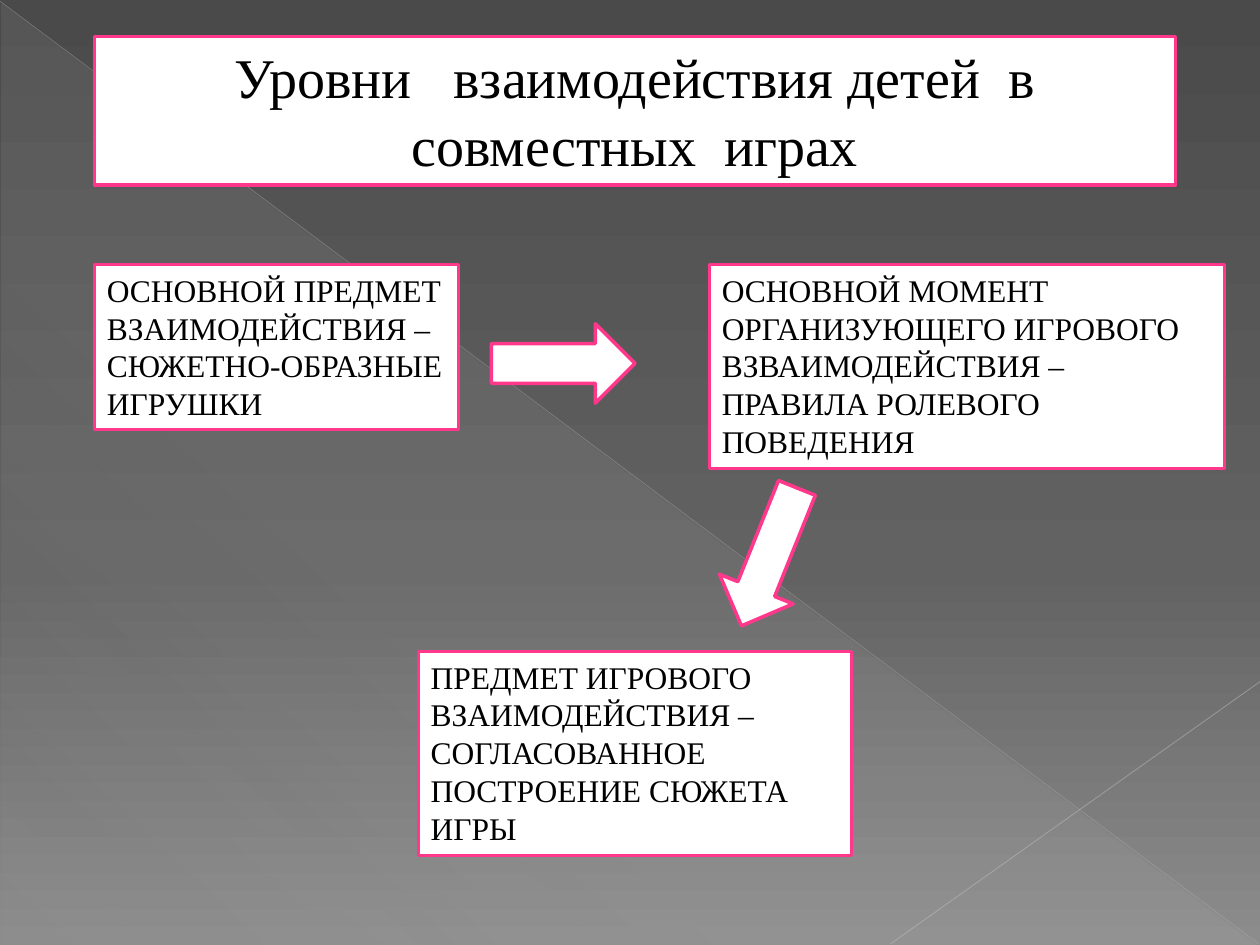
import dataclasses
import typing

import lxml.etree
import pptx
import pptx.dml.color
import pptx.enum.dml
import pptx.enum.shapes
import pptx.enum.text
import pptx.oxml.ns
import pptx.util

RGBColor = pptx.dml.color.RGBColor
Shapes = pptx.enum.shapes.MSO_SHAPE
qn = pptx.oxml.ns.qn

WHITE = RGBColor(0xFF, 0xFF, 0xFF)
BLACK = RGBColor(0x00, 0x00, 0x00)
PINK = RGBColor(0xFF, 0x38, 0x8C)
DARK_GREY = RGBColor(0x4A, 0x4A, 0x4A)
MID_GREY = RGBColor(0x62, 0x62, 0x62)
LIGHT_GREY = RGBColor(0x8C, 0x8C, 0x8C)
VEIL_GREY = RGBColor(0xD2, 0xD2, 0xD2)
DIAGONAL_GREY = RGBColor(0xBF, 0xBF, 0xBF)
CORNER_GREY = RGBColor(0xC6, 0xC6, 0xC6)

FONT = "Times New Roman"
CELL = pptx.util.Inches(0.1)  # the slide is a grid of 100 columns by 75 rows
COLUMNS, ROWS = 100, 75
LEFT_EDGE, LEVEL_ROW = 7.5, 21


@dataclasses.dataclass(frozen=True)
class Area:
    column: float
    row: float
    columns: float
    rows: float

    def lengths(self) -> list[int]:
        return [round(value * CELL) for value in dataclasses.astuple(self)]


@dataclasses.dataclass(frozen=True)
class Level:
    area: Area
    text: str


@dataclasses.dataclass(frozen=True)
class Arrow:
    area: Area
    kind: Shapes
    rotation: float = 0


@dataclasses.dataclass(frozen=True)
class Ray:
    start: tuple[float, float]
    end: tuple[float, float]
    color: RGBColor
    width: float
    opacity: int


@dataclasses.dataclass(frozen=True)
class Stop:
    position: int
    color: RGBColor
    opacity: int = 100


TITLE = Level(Area(LEFT_EDGE, 2.9, 85.8, 11.8), "Уровни   взаимодействия детей  в совместных  играх")
LEVELS = (
    Level(Area(LEFT_EDGE, LEVEL_ROW, 28.9, 13.1),
          "ОСНОВНОЙ ПРЕДМЕТ ВЗАИМОДЕЙСТВИЯ – СЮЖЕТНО-ОБРАЗНЫЕ ИГРУШКИ"),
    Level(Area(56.3, LEVEL_ROW, 40.9, 16.2),
          "ОСНОВНОЙ МОМЕНТ ОРГАНИЗУЮЩЕГО ИГРОВОГО ВЗВАИМОДЕЙСТВИЯ – ПРАВИЛА РОЛЕВОГО ПОВЕДЕНИЯ"),
    Level(Area(33.2, 51.7, 34.4, 16.2),
          "ПРЕДМЕТ ИГРОВОГО ВЗАИМОДЕЙСТВИЯ – СОГЛАСОВАННОЕ ПОСТРОЕНИЕ СЮЖЕТА ИГРЫ"),
)
ARROWS = (
    Arrow(Area(39, 25.7, 11.4, 6.3), Shapes.RIGHT_ARROW),
    Arrow(Area(57.9, 38.3, 6.3, 11.8), Shapes.DOWN_ARROW, 21.9),
)
RAYS = (
    Ray((0, 0.1), (99.9, 74.9), DIAGONAL_GREY, 0.39, 35),
    Ray((100, 54.1), (70.7, 74.9), CORNER_GREY, 0.47, 45),
)
BACKDROP = (Stop(0, DARK_GREY), Stop(60, MID_GREY), Stop(100, LIGHT_GREY))
VEIL = (Stop(0, VEIL_GREY, 10), Stop(70, VEIL_GREY, 8), Stop(100, VEIL_GREY, 1))


def set_opacity(color_element, percent: int) -> None:
    alpha = lxml.etree.SubElement(color_element, qn("a:alpha"))
    alpha.set("val", str(percent * 1000))


def apply_gradient(fill, owner, stops: typing.Sequence[Stop], angle: float) -> None:
    """Fill with any number of stops; the angle runs clockwise."""
    fill.gradient()
    fill.gradient_angle = 360 - angle
    stop_list = next(owner.iter(qn("a:gsLst")))
    for old_stop in list(stop_list):
        stop_list.remove(old_stop)
    for stop in stops:
        entry = lxml.etree.SubElement(stop_list, qn("a:gs"), pos=str(stop.position * 1000))
        color = lxml.etree.SubElement(entry, qn("a:srgbClr"), val=str(stop.color))
        if stop.opacity < 100:
            set_opacity(color, stop.opacity)


def draw_veil(page) -> None:
    veil = page.shapes.add_shape(Shapes.RIGHT_TRIANGLE, *Area(0.1, 0.2, 99.8, 74.8).lengths())
    veil.shadow.inherit = False
    veil.line.fill.background()
    apply_gradient(veil.fill, veil.element, VEIL, 133)


def draw_ray(page, ray: Ray) -> None:
    ends = [round(value * CELL) for value in ray.start + ray.end]
    line = page.shapes.add_connector(pptx.enum.shapes.MSO_CONNECTOR.STRAIGHT, *ends)
    line.line.width = pptx.util.Pt(ray.width)
    line.line.color.rgb = ray.color
    set_opacity(next(line.element.iter(qn("a:srgbClr"))), ray.opacity)
    lxml.etree.SubElement(line.element.spPr, qn("a:effectLst"))


def paint_card(shape) -> None:
    shape.fill.solid()
    shape.fill.fore_color.rgb = WHITE
    shape.line.color.rgb = PINK
    shape.line.width = pptx.util.Pt(2)


def write_text(shape, text: str, size: int, alignment) -> None:
    frame = shape.text_frame
    frame.text = text
    frame.word_wrap = True
    frame.auto_size = pptx.enum.text.MSO_AUTO_SIZE.NONE
    frame.vertical_anchor = pptx.enum.text.MSO_ANCHOR.TOP
    para = frame.paragraphs[0]
    para.alignment = alignment
    for span in para.runs:
        span.font.name = FONT
        span.font.size = pptx.util.Pt(size)
        span.font.color.rgb = BLACK


def draw_title(page) -> None:
    title = page.shapes.title
    title.left, title.top, title.width, title.height = TITLE.area.lengths()
    paint_card(title)
    write_text(title, TITLE.text, 32, pptx.enum.text.PP_ALIGN.CENTER)
    title.element.getparent().append(title.element)  # in front of the backdrop


def draw_level(page, level: Level) -> None:
    box = page.shapes.add_textbox(*level.area.lengths())
    paint_card(box)
    write_text(box, level.text, 18, pptx.enum.text.PP_ALIGN.LEFT)


def draw_arrow(page, arrow: Arrow) -> None:
    shape = page.shapes.add_shape(arrow.kind, *arrow.area.lengths())
    shape.shadow.inherit = False
    shape.rotation = arrow.rotation
    paint_card(shape)


def main() -> None:
    deck = pptx.Presentation()
    deck.slide_width, deck.slide_height = COLUMNS * CELL, ROWS * CELL
    page = deck.slides.add_slide(deck.slide_layouts.get_by_name("Title Only"))
    apply_gradient(page.background.fill, page.element, BACKDROP, 90)
    draw_veil(page)
    for ray in RAYS:
        draw_ray(page, ray)
    draw_title(page)
    for level in LEVELS:
        draw_level(page, level)
    for arrow in ARROWS:
        draw_arrow(page, arrow)
    deck.save("out.pptx")


if __name__ == "__main__":
    main()
